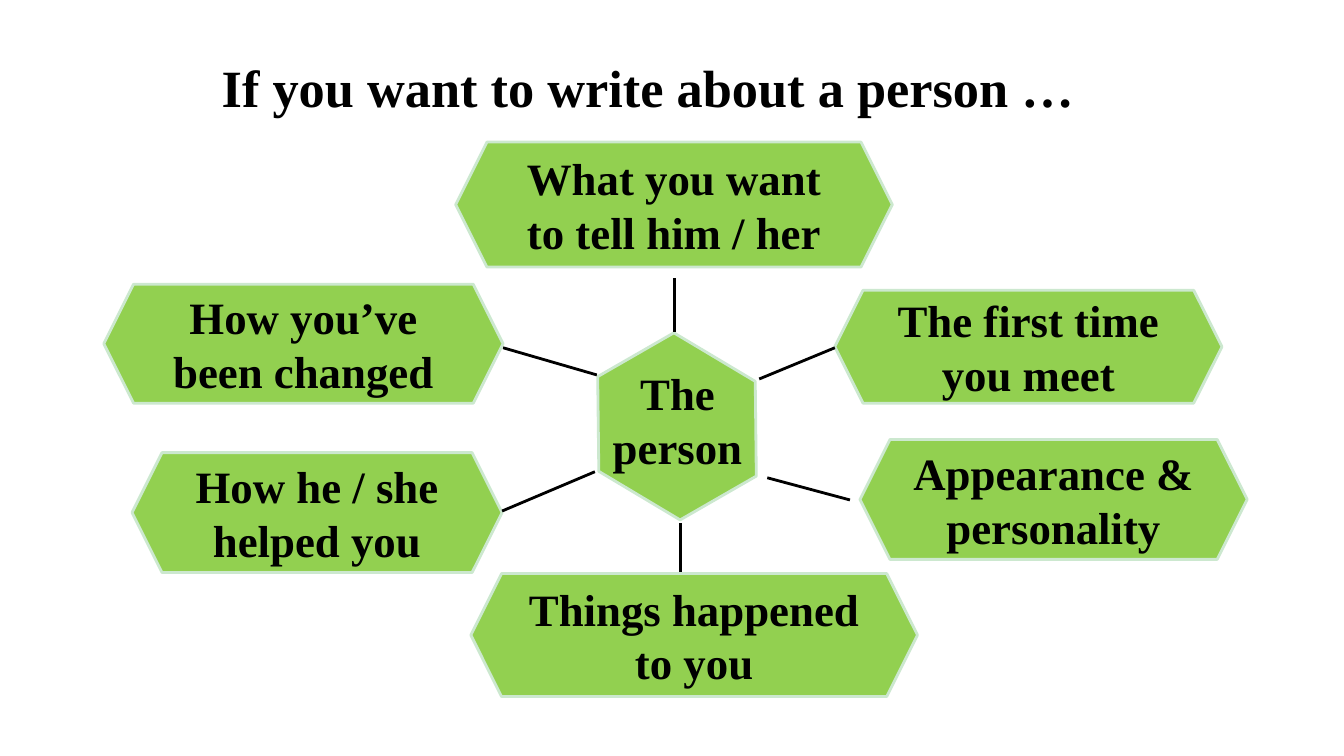
from lxml.etree import SubElement
from pptx import Presentation
from pptx.dml.color import RGBColor
from pptx.enum.shapes import MSO_CONNECTOR, MSO_SHAPE
from pptx.enum.text import MSO_ANCHOR, PP_ALIGN
from pptx.oxml.ns import qn
from pptx.util import Inches, Pt

COLORS = {"fill": "92D050", "outline": "CCE8CF", "ink": "000000"}
FONT = "Times New Roman"

IDEAS = [
    ("The first time you meet", 8.28, 2.88, 3.84, 1.12),
    ("Appearance & personality", 8.53, 4.36, 3.84, 1.19),
    ("Things happened to you", 4.67, 5.69, 4.43, 1.22),
    ("How he / she helped you", 1.31, 4.49, 3.67, 1.19),
    ("How you’ve been changed", 1.03, 2.82, 3.96, 1.18),
    ("What you want to tell him / her", 4.52, 1.41, 4.33, 1.24),
]
SPOKES = [
    (8.28, 3.45, 7.53, 3.76),
    (8.43, 4.96, 7.61, 4.74),
    (6.75, 5.19, 6.75, 5.67),
    (5.9, 4.68, 4.98, 5.07),
    (5.92, 3.72, 4.99, 3.45),
    (6.69, 3.29, 6.69, 2.76),
]


def color(name):
    return RGBColor.from_string(COLORS[name])


def write_text(shape, text, size=32, align=PP_ALIGN.CENTER,
               anchor=MSO_ANCHOR.MIDDLE, space_before=0):
    frame = shape.text_frame
    frame.word_wrap = True
    frame.vertical_anchor = anchor
    paragraph = frame.paragraphs[0]
    paragraph.alignment = align
    paragraph.space_before = Pt(space_before)
    run = paragraph.add_run()
    run.text = text
    run.font.name = FONT
    run.font.size = Pt(size)
    run.font.bold = True
    run.font.color.rgb = color("ink")


class MindMap:
    line_width = Pt(2)

    def __init__(self, slide):
        self.slide = slide

    def hexagon(self, left, top, width, height):
        shape = self.slide.shapes.add_shape(
            MSO_SHAPE.HEXAGON, *map(Inches, (left, top, width, height)))
        shape.shadow.inherit = False
        shape.fill.solid()
        shape.fill.fore_color.rgb = color("fill")
        shape.line.color.rgb = color("outline")
        shape.line.width = self.line_width
        return shape

    def label(self, text, left, top, width, height, **style):
        box = self.slide.shapes.add_textbox(
            *map(Inches, (left, top, width, height)))
        write_text(box, text, anchor=MSO_ANCHOR.TOP, **style)

    def spoke(self, *ends):
        connector = self.slide.shapes.add_connector(
            MSO_CONNECTOR.STRAIGHT, *map(Inches, ends))
        connector.line.color.rgb = color("ink")
        connector.line.width = self.line_width
        SubElement(connector._element.spPr, qn("a:effectLst"))


def main():
    presentation = Presentation()
    presentation.slide_width = Inches(13.33)
    presentation.slide_height = Inches(7.5)
    slide = presentation.slides.add_slide(presentation.slide_layouts[6])
    mind_map = MindMap(slide)

    center = mind_map.hexagon(5.82, 3.41, 1.79, 1.64)
    center.adjustments[0] = 0.28
    center.rotation = 330.1
    mind_map.label("If you want to write about a person …", 2.1, 0.5, 9.31, 0.73,
                   size=37.4, align=PP_ALIGN.LEFT, space_before=4)
    mind_map.label("The person", 5.68, 3.58, 2.08, 1.18)

    for text, *bounds in IDEAS:
        write_text(mind_map.hexagon(*bounds), text)
    for ends in SPOKES:
        mind_map.spoke(*ends)

    presentation.save("out.pptx")


if __name__ == "__main__":
    main()
